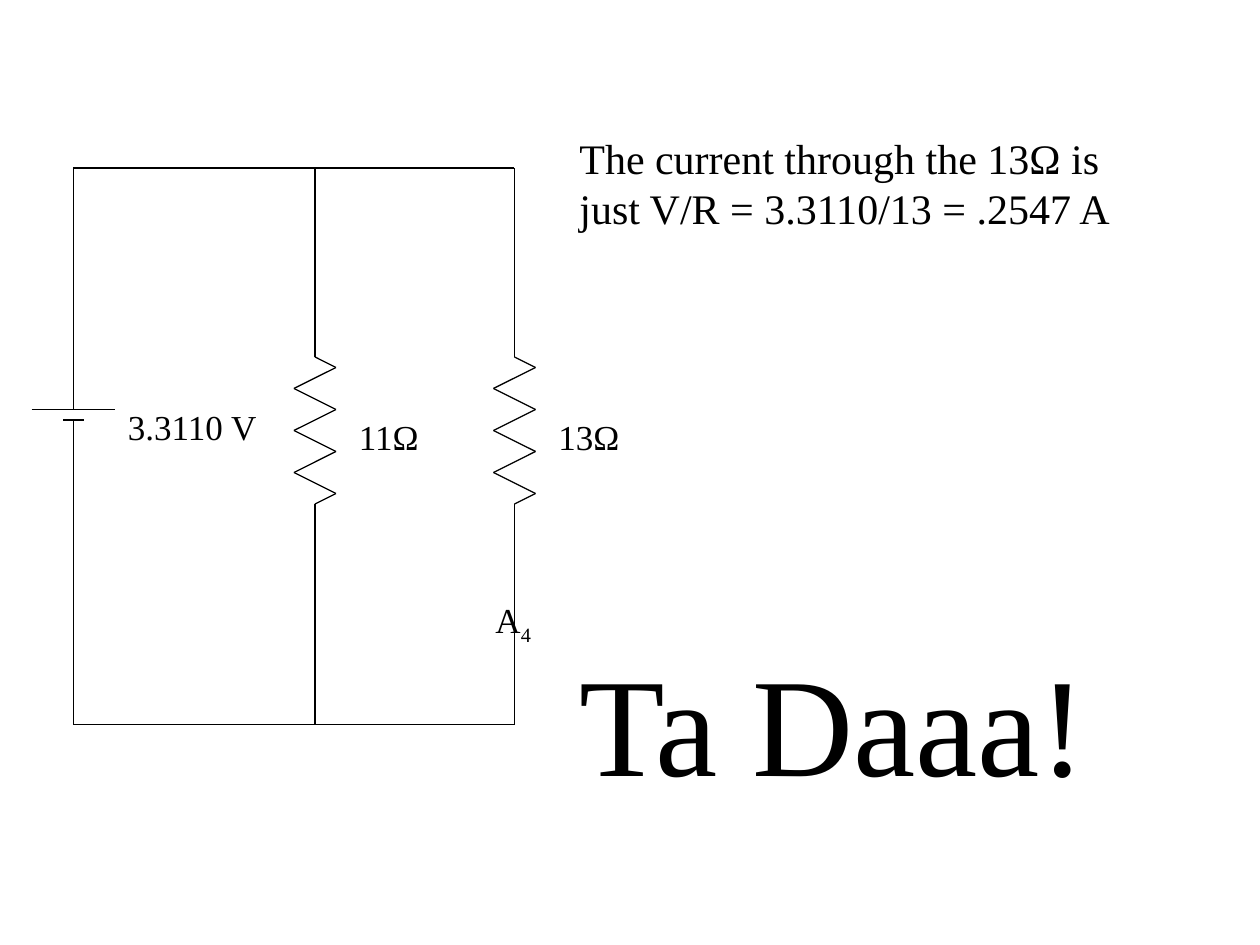
from itertools import pairwise

from lxml.etree import SubElement
from pptx import Presentation
from pptx.dml.color import RGBColor
from pptx.enum.shapes import MSO_CONNECTOR
from pptx.enum.text import MSO_AUTO_SIZE
from pptx.oxml.ns import qn
from pptx.util import Pt

COLORS = {"ink": "000000", "paper": "FFFFFF"}
FONT = "Times New Roman"
LEADING = 1.2
LABEL_SIZE = 20
LABEL_HEIGHT = 31


def draw_wire(slide, start, end):
    wire = slide.shapes.add_connector(
        MSO_CONNECTOR.STRAIGHT, *(Pt(v) for v in (*start, *end)))
    wire.line.color.rgb = RGBColor.from_string(COLORS["ink"])
    wire.line.width = Pt(0.75)
    SubElement(wire._element.spPr, qn("a:effectLst"))


def draw_path(slide, points):
    for start, end in pairwise(points):
        draw_wire(slide, start, end)


def add_text_frame(slide, left, top, width, height, wrap):
    frame = slide.shapes.add_textbox(
        Pt(left), Pt(top), Pt(width), Pt(height)).text_frame
    frame.word_wrap = wrap
    frame.auto_size = MSO_AUTO_SIZE.SHAPE_TO_FIT_TEXT
    return frame


def write_paragraph(paragraph, text, size):
    paragraph.text = text
    paragraph.line_spacing = Pt(size * LEADING)
    paragraph.font.name = FONT
    paragraph.font.size = Pt(size)
    paragraph.font.color.rgb = RGBColor.from_string(COLORS["ink"])


def add_label(slide, text, left, top, width, subscript=""):
    frame = add_text_frame(slide, left, top, width, LABEL_HEIGHT, False)
    label = frame.paragraphs[0]
    write_paragraph(label, text, LABEL_SIZE)
    if subscript:
        index = label.add_run()
        index.text = subscript
        index.font._element.set("baseline", "-25000")


def draw_battery(slide, x, top, bottom, middle):
    """Two plates around the middle, with leads to the top and bottom rails."""
    long_plate, short_plate = middle - 3, middle + 3
    draw_wire(slide, (x, top), (x, long_plate))
    draw_wire(slide, (x - 24, long_plate), (x + 24, long_plate))
    draw_wire(slide, (x - 6, short_plate), (x + 6, short_plate))
    draw_wire(slide, (x, short_plate), (x, bottom))


def draw_resistor_branch(slide, x, top, bottom, zigzag_top):
    """A zigzag of seven peaks, with leads to the top and bottom rails."""
    half_width, step, peaks = 12, 12, 7
    zigzag_bottom = zigzag_top + peaks * step
    zigzag = [(x + half_width * (-1) ** i, zigzag_top + step * (i + 0.5))
              for i in range(peaks)]
    draw_path(slide, [(x, top), (x, zigzag_top), *zigzag,
                      (x, zigzag_bottom), (x, bottom)])


def draw_circuit(slide, left, top, width, height):
    bottom, right = top + height, left + width
    middle_branch = left + 138

    # Rails
    for rail in (top, bottom):
        draw_path(slide, [(left, rail), (middle_branch, rail), (right, rail)])

    # Source
    draw_battery(slide, left, top, bottom, top + 141)
    add_label(slide, "3.3110 V", left + 24, top + 132, 89)

    # Resistors in parallel
    for x, resistance in ((middle_branch, "11Ω"), (right, "13Ω")):
        draw_resistor_branch(slide, x, top, bottom, top + 108)
        add_label(slide, resistance, x + 18, top + 138, 50)

    # Ammeter
    add_label(slide, "A", right - 18, top + 246, 35, subscript="4")


def add_explanation(slide, left, top, width, height):
    size = 24
    frame = add_text_frame(slide, left, top, width, height, True)
    write_paragraph(
        frame.paragraphs[0],
        "The current through the 13Ω is just V/R = 3.3110/13 = .2547 A", size)
    finale = frame.add_paragraph()
    write_paragraph(finale, "Ta Daaa!", 80)
    finale.space_before = Pt(8 * size * LEADING)


def main():
    deck = Presentation()
    deck.slide_width, deck.slide_height = Pt(720), Pt(540)
    slide = deck.slides.add_slide(deck.slide_layouts[6])
    slide.background.fill.solid()
    slide.background.fill.fore_color.rgb = RGBColor.from_string(COLORS["paper"])
    draw_circuit(slide, 42, 96, 252, 318)
    add_explanation(slide, 324, 72, 342, 391)
    deck.save("out.pptx")


if __name__ == "__main__":
    main()
